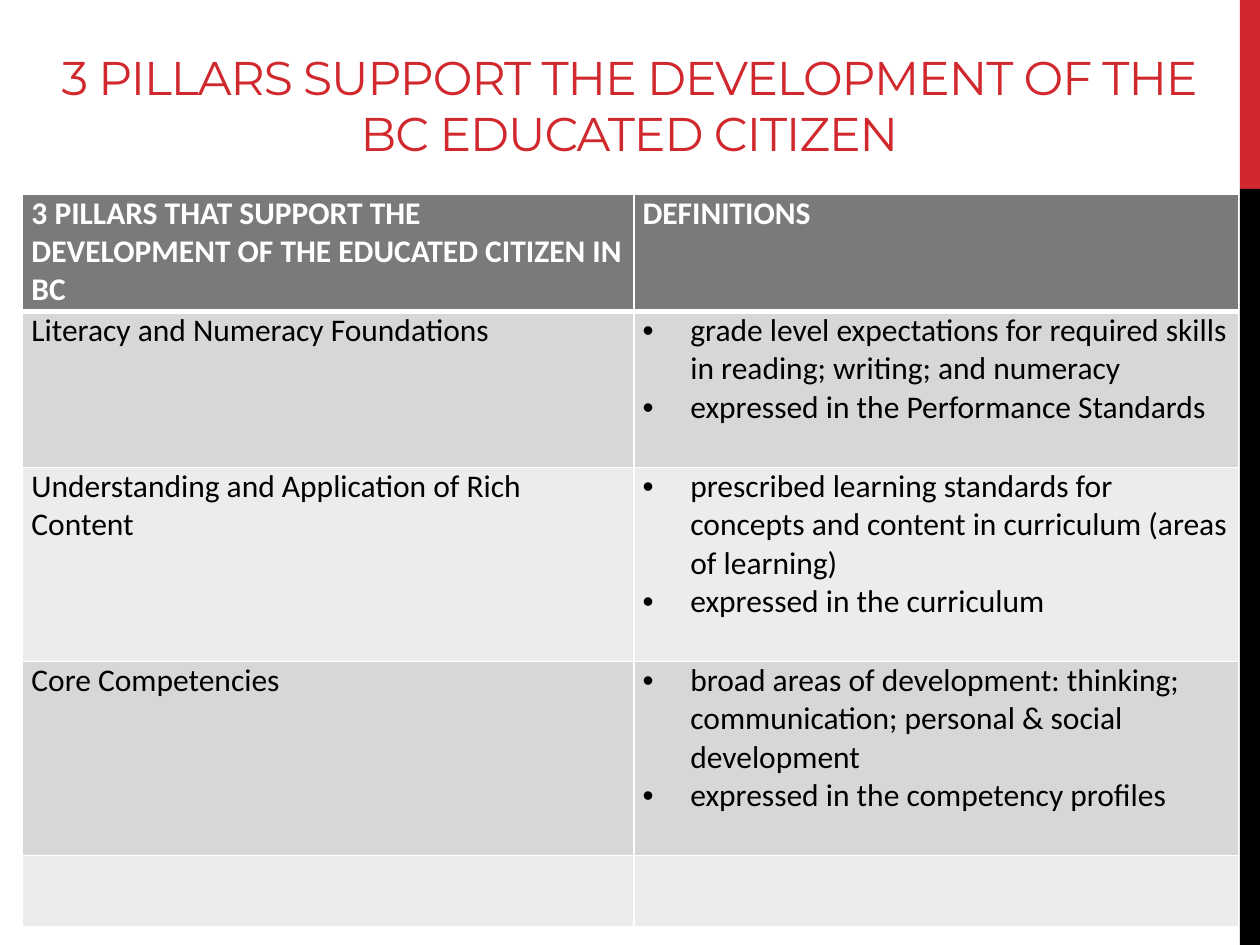
from lxml import etree
from pptx import Presentation, util as u
from pptx.dml.color import RGBColor
from pptx.enum import shapes, text
from pptx.oxml.ns import qn

RED = RGBColor(0xD1, 0x28, 0x2E)
BLACK = RGBColor(0, 0, 0)
WHITE = RGBColor(255, 255, 255)
HEADER_GRAY = RGBColor(0x7A, 0x7A, 0x7A)
BANDS = [RGBColor(0xD7, 0xD7, 0xD7), RGBColor(0xEC, 0xEC, 0xEC)]

COLUMNS = [4.85, 4.8]
ROWS = [0.93, 1.24, 1.54, 1.54, 0.57]
CONTENT = [
    (["3 PILLARS THAT SUPPORT THE DEVELOPMENT OF THE EDUCATED CITIZEN IN BC"],
     ["DEFINITIONS"]),
    (["Literacy and Numeracy Foundations"],
     ["grade level expectations for required skills in reading; writing; and numeracy",
      "expressed in the Performance Standards"]),
    (["Understanding and Application of Rich Content"],
     ["prescribed learning standards for concepts and content in curriculum (areas of learning)",
      "expressed in the curriculum"]),
    (["Core Competencies"],
     ["broad areas of development: thinking; communication; personal & social development",
      "expressed in the competency profiles"]),
    ([], []),
]


def add_borders(cell, bottom_width):
    properties = cell._tc.get_or_add_tcPr()
    widths = {"a:lnL": 1, "a:lnR": 1, "a:lnT": 1, "a:lnB": bottom_width}
    for position, (side, width) in enumerate(widths.items()):
        line = etree.Element(qn(side), w=str(u.Pt(width)))
        fill = etree.SubElement(line, qn("a:solidFill"))
        etree.SubElement(fill, qn("a:srgbClr"), val=str(WHITE))
        properties.insert(position, line)


def add_bullet(paragraph):
    properties = paragraph._p.get_or_add_pPr()
    properties.set("marL", str(u.Inches(0.38)))
    properties.set("indent", str(-u.Inches(0.38)))
    etree.SubElement(properties, qn("a:buFont"), typeface="Arial")
    etree.SubElement(properties, qn("a:buChar"), char="•")


presentation = Presentation()
presentation.slide_width = u.Inches(10)
presentation.slide_height = u.Inches(7.5)
WIDTH, HEIGHT = presentation.slide_width, presentation.slide_height
slide = presentation.slides.add_slide(presentation.slide_layouts[6])

band_left = u.Inches(9.84)
for top, share, color in [(0, 0.2, RED), (0.2, 0.8, BLACK)]:
    band = slide.shapes.add_shape(
        shapes.MSO_SHAPE.RECTANGLE, band_left, int(HEIGHT * top),
        WIDTH - band_left, int(HEIGHT * share))
    band.shadow.inherit = False
    band.fill.solid()
    band.fill.fore_color.rgb = color
    band.line.fill.background()

title = slide.shapes.add_textbox(
    u.Inches(0.33), u.Inches(-0.42), u.Inches(9.33), u.Inches(1.75))
title_frame = title.text_frame
title_frame.word_wrap = True
title_frame.vertical_anchor = text.MSO_ANCHOR.BOTTOM
title_frame.text = "3 PILLARS SUPPORT THE DEVELOPMENT OF THE\vBC EDUCATED CITIZEN"
paragraph = title_frame.paragraphs[0]
paragraph.alignment = text.PP_ALIGN.CENTER
for run in paragraph.runs:
    run.font.name = "Montserrat"
    run.font.size = u.Pt(27)
    run.font.color.rgb = RED
    run._r.get_or_add_rPr().set("spc", "-60")

table = slide.shapes.add_table(
    len(ROWS), len(COLUMNS), u.Inches(0.18), u.Inches(1.54),
    u.Inches(sum(COLUMNS)), u.Inches(sum(ROWS))).table
table.horz_banding = False
for column, width in zip(table.columns, COLUMNS):
    column.width = u.Inches(width)

for row_index, (row, height) in enumerate(zip(table.rows, ROWS)):
    row.height = u.Inches(height)
    is_header = row_index == 0
    for column_index, cell in enumerate(row.cells):
        lines = CONTENT[row_index][column_index]
        cell.margin_left = cell.margin_right = u.Inches(0.07)
        cell.margin_top = cell.margin_bottom = 0
        cell.fill.solid()
        cell.fill.fore_color.rgb = HEADER_GRAY if is_header else BANDS[(row_index - 1) % 2]
        add_borders(cell, 3 if is_header else 1)
        cell.text_frame.text = "\n".join(lines)
        for paragraph in cell.text_frame.paragraphs:
            if lines and column_index == 1 and not is_header:
                add_bullet(paragraph)
            for run in paragraph.runs:
                run.font.name = "Calibri"
                run.font.size = u.Pt(18)
                run.font.bold = is_header
                run.font.color.rgb = WHITE if is_header else BLACK

presentation.save("out.pptx")
